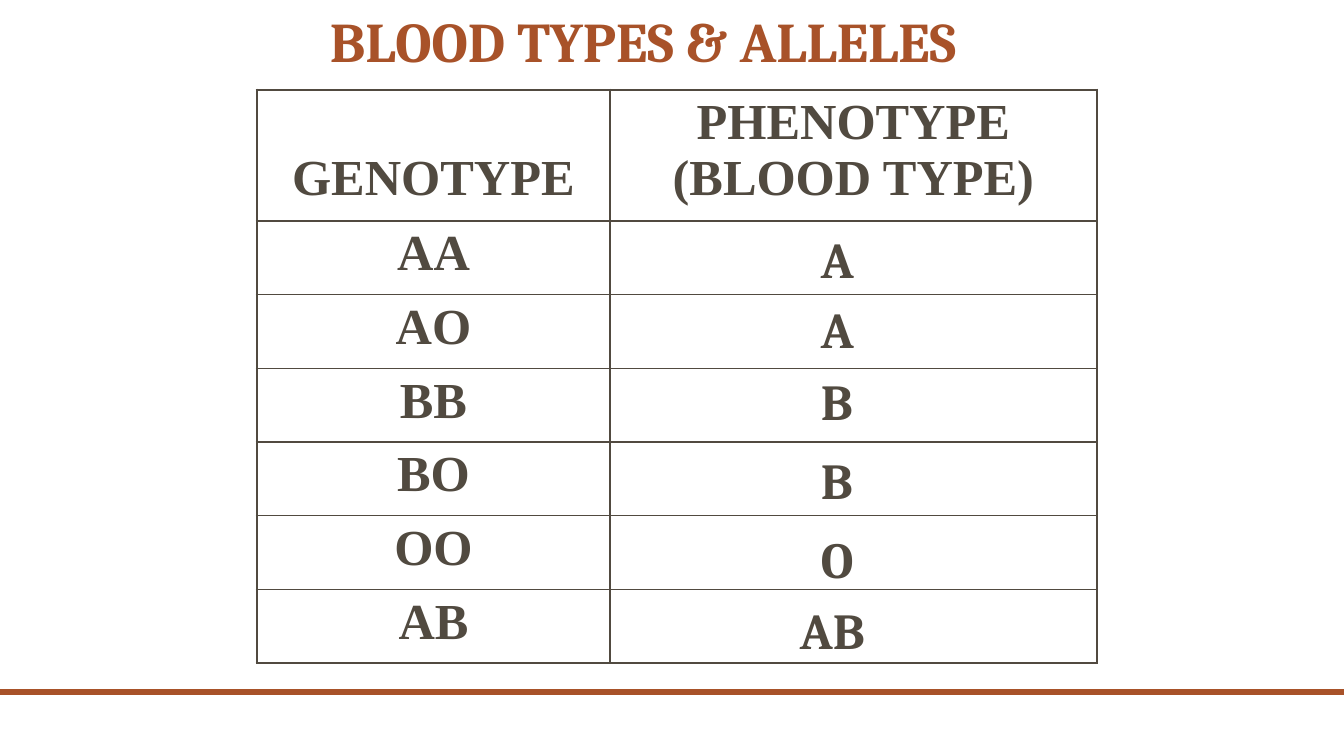
from dataclasses import dataclass

from lxml import etree
from pptx import Presentation
from pptx import util as u
from pptx.dml.color import RGBColor
from pptx.enum import shapes, text
from pptx.oxml import ns


@dataclass(frozen=True)
class Theme:
    """Colours, fonts and sizes of the slide."""
    accent: str = "A85229"
    ink: str = "514A40"
    display: str = "Cambria"
    serif: str = "Times New Roman"
    title_size: int = 40
    body_size: int = 36
    outer_line: float = 2.25
    inner_line: float = 1


THEME = Theme()
SLIDE_WIDTH, SLIDE_HEIGHT = 1344, 756
SCALE = u.Inches(40 / 3) / SLIDE_WIDTH
HEADINGS = ("GENOTYPE", "PHENOTYPE\n(BLOOD TYPE)")
GENOTYPES = ("AA", "AO", "BB", "BO", "OO", "AB")
PHENOTYPES = (("A", 554, 133), ("A", 554, 203), ("B", 554, 275),
              ("B", 554, 354), ("O", 554, 433), ("AB", 533, 504))


def px(length):
    """Turn px into EMU."""
    return u.Emu(round(length * SCALE))


def write_text(frame, content, font=THEME.display, size=THEME.body_size,
               color=THEME.ink, align=text.PP_ALIGN.LEFT, line_spacing=1.0):
    """Write bold text into the first paragraph of a frame."""
    paragraph = frame.paragraphs[0]
    paragraph.text = content
    paragraph.alignment = align
    paragraph.line_spacing = line_spacing
    for run in paragraph.runs:
        run.font.name = font
        run.font.size = u.Pt(size)
        run.font.bold = True
        run.font.color.rgb = RGBColor.from_string(color)


def add_label(slide, content, box, anchor=text.MSO_ANCHOR.TOP, **style):
    """Add a text box in the given box."""
    frame = slide.shapes.add_textbox(*map(px, box)).text_frame
    frame.word_wrap = True
    frame.vertical_anchor = anchor
    write_text(frame, content, **style)


def set_borders(cell, widths):
    """Draw the left, right, top and bottom borders of a cell."""
    properties = cell._tc.get_or_add_tcPr()
    for side, width in zip("LRTB", widths):
        line = etree.SubElement(properties, ns.qn(f"a:ln{side}"), w=str(u.Pt(width)))
        fill = etree.SubElement(line, ns.qn("a:solidFill"))
        etree.SubElement(fill, ns.qn("a:srgbClr"), val=THEME.ink)


def add_genotype_table(slide, box, first_column=353, header=131):
    """Add the table of genotypes with its phenotype labels."""
    left, top, width, height = box
    row_count = len(GENOTYPES) + 1
    table = slide.shapes.add_table(row_count, 2, *map(px, box)).table
    table.first_row = table.horz_banding = False
    for column, size in zip(table.columns, (first_column, width - first_column)):
        column.width = px(size)
    for index, row in enumerate(table.rows):
        row.height = px(header if index == 0 else (height - header) / len(GENOTYPES))
        for position, cell in enumerate(row.cells):
            edges = (position == 0, position == 1, index == 0, index == row_count - 1)
            set_borders(cell, [THEME.outer_line if edge else THEME.inner_line
                               for edge in edges])
            cell.fill.background()
    cells = [table.cell(0, 0), table.cell(0, 1)]
    cells += [table.cell(index, 0) for index in range(1, row_count)]
    for cell, content in zip(cells, HEADINGS + GENOTYPES):
        write_text(cell.text_frame, content, font=THEME.serif,
                   align=text.PP_ALIGN.CENTER)
    cells[0].vertical_anchor = text.MSO_ANCHOR.BOTTOM
    cells[0].margin_bottom = px(15)
    for content, x, y in PHENOTYPES:
        add_label(slide, content, (left + x, top + y, 134, 72))


def add_footer_band(slide, box):
    """Add the coloured band near the foot of the slide."""
    band = slide.shapes.add_shape(shapes.MSO_SHAPE.RECTANGLE, *map(px, box))
    band.shadow.inherit = False
    band.fill.solid()
    band.fill.fore_color.rgb = RGBColor.from_string(THEME.accent)
    band.line.fill.background()


def main():
    """Build and save the slide."""
    presentation = Presentation()
    presentation.slide_width = px(SLIDE_WIDTH)
    presentation.slide_height = px(SLIDE_HEIGHT)
    slide = presentation.slides.add_slide(presentation.slide_layouts[6])
    add_footer_band(slide, (0, 689, SLIDE_WIDTH, 6))
    add_label(slide, "BLOOD TYPES & ALLELES", (320, 0, 1024, 80),
              anchor=text.MSO_ANCHOR.BOTTOM, size=THEME.title_size,
              color=THEME.accent, line_spacing=0.9)
    add_genotype_table(slide, (257, 90, 840, 573))
    presentation.save("out.pptx")


if __name__ == "__main__":
    main()
